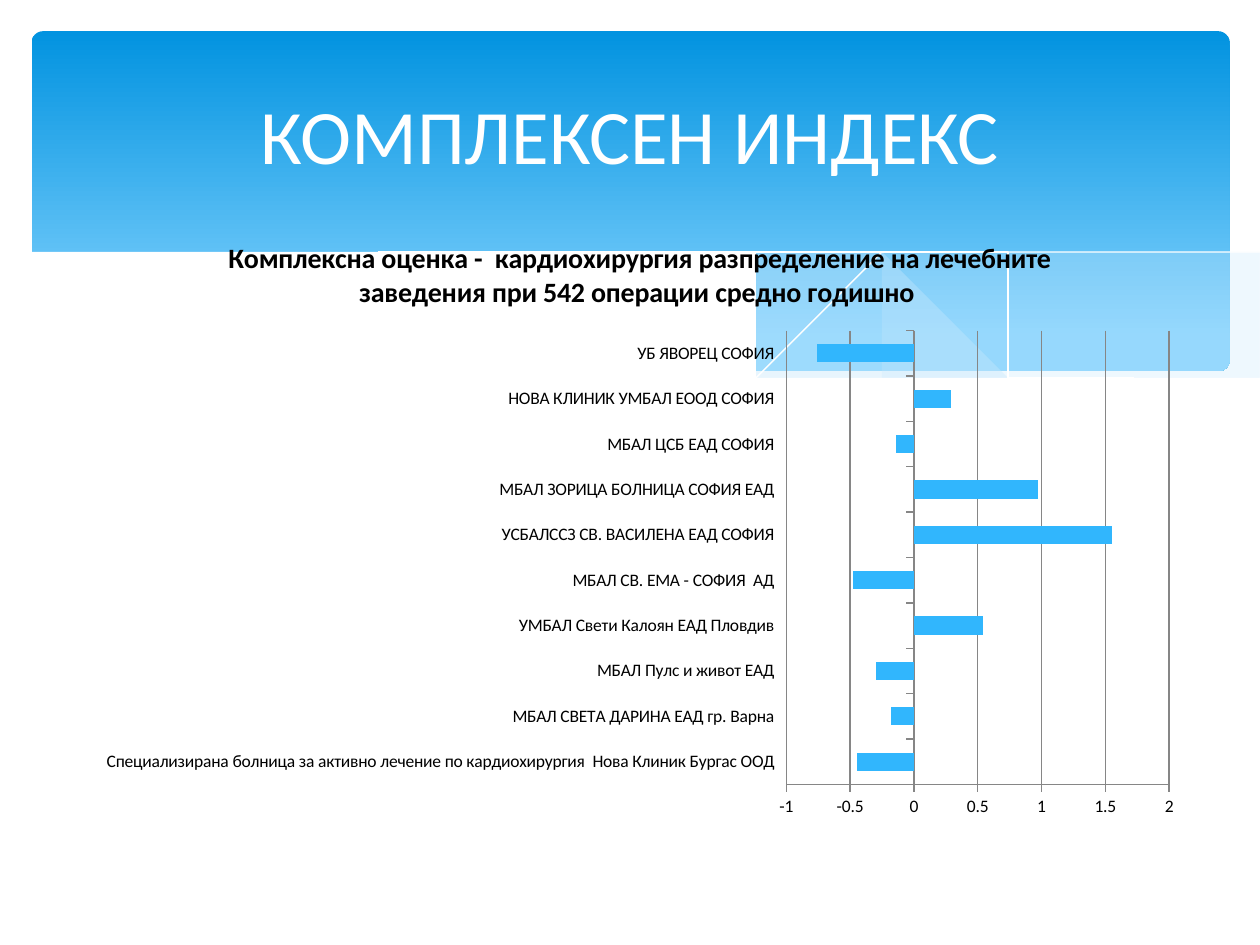
from lxml.etree import SubElement
from pptx import Presentation
from pptx.chart.data import CategoryChartData
from pptx.dml.color import RGBColor
from pptx.enum.chart import XL_CHART_TYPE, XL_TICK_LABEL_POSITION, XL_TICK_MARK
from pptx.enum.shapes import MSO_SHAPE
from pptx.enum.text import MSO_ANCHOR, PP_ALIGN
from pptx.oxml.ns import qn
from pptx.util import Inches, Pt

WIDTH, HEIGHT = Inches(10), Inches(7.5)
FONT = "Calibri"
WHITE = RGBColor(0xFF, 0xFF, 0xFF)
BLACK = RGBColor(0, 0, 0)
GRAY = RGBColor(0x86, 0x86, 0x86)
SKY_TOP = RGBColor(0x02, 0x93, 0xE0)
SKY_BOTTOM = RGBColor(0x83, 0xD3, 0xFE)
PALE_BLUE = RGBColor(0xC6, 0xE7, 0xFC)
BAR_BLUE = RGBColor(0x31, 0xB6, 0xFD)

SMALL_WAVE = [
    [(9.76, 2), (9.35, 2.07), (8.61, 2.23), (7.79, 2.42), (6.61, 2.65)],
    [(6.61, 2.65), (7.19, 2.72), (7.81, 2.77), (8.35, 2.77), (8.89, 2.72), (9.35, 2.62), (9.76, 2.47)],
]
LONG_WAVE = [
    [(8.93, 2.73), (8.37, 2.65), (7.75, 2.54), (7.06, 2.4), (6.29, 2.22), (5.55, 2.05),
     (4.89, 1.94), (4.2, 1.87), (3.61, 1.85), (2.86, 1.91)],
    [(2.86, 1.91), (3.62, 2.03), (4.49, 2.22), (5.3, 2.4), (6.01, 2.55), (6.65, 2.66),
     (7.22, 2.74), (7.73, 2.77), (8.18, 2.78), (8.57, 2.77), (8.93, 2.73)],
]
FALLING_LINE = [[(3.09, 1.95), (3.44, 1.9), (4.01, 1.87), (4.69, 1.89), (5.56, 1.97),
                 (6.36, 2.08), (7.27, 2.26), (8.31, 2.51), (9.07, 2.72)]]
RISING_LINE = [[(6.13, 2.57), (6.72, 2.41), (7.48, 2.23), (8.36, 2.04), (9.1, 1.92), (9.75, 1.85)]]
WHITE_WAVE = [
    [(9.77, 2.46), (9.3, 2.62), (8.75, 2.73), (8.09, 2.77), (7.44, 2.74), (6.68, 2.65),
     (5.79, 2.5), (5.03, 2.33), (4.18, 2.13), (3.4, 1.97), (2.71, 1.88), (2.11, 1.84),
     (1.61, 1.84), (1.06, 1.89), (0.59, 1.99), (0.23, 2.13)],
    [(0.23, 3.29), (9.77, 3.29)],
]
TITLE = "КОМПЛЕКСЕН ИНДЕКС"
CHART_TITLE = ("Комплексна оценка -  кардиохирургия разпределение на лечебните "
               "заведения при 542 операции средно годишно ")
SCORES = {
    "Специализирана болница за активно лечение по кардиохирургия  Нова Клиник Бургас ООД": -0.45,
    "МБАЛ СВЕТА ДАРИНА ЕАД гр. Варна": -0.18,
    "МБАЛ Пулс и живот ЕАД": -0.3,
    "УМБАЛ Свети Калоян ЕАД Пловдив": 0.54,
    "МБАЛ СВ. ЕМА - СОФИЯ  АД": -0.48,
    "УСБАЛССЗ СВ. ВАСИЛЕНА ЕАД СОФИЯ": 1.55,
    "МБАЛ ЗОРИЦА БОЛНИЦА СОФИЯ ЕАД": 0.97,
    "МБАЛ ЦСБ ЕАД СОФИЯ": -0.14,
    "НОВА КЛИНИК УМБАЛ ЕООД СОФИЯ": 0.29,
    "УБ ЯВОРЕЦ СОФИЯ": -0.76,
}


def apply_format(target, values):
    """Set every attribute named in a dict of format values."""
    for name, value in values.items():
        setattr(target, name, value)


def style_font(font, size, color, bold=False):
    """Give a font the slide's typeface with a size and colour."""
    apply_format(font, {"name": FONT, "size": Pt(size), "bold": bold})
    font.color.rgb = color


def box(left, top, width, height):
    """Turn shares of the slide's size into a position and size."""
    return int(WIDTH * left), int(HEIGHT * top), int(WIDTH * width), int(HEIGHT * height)


def smooth(knots, steps=4):
    """Return points of a Catmull-Rom curve through the knots."""
    if len(knots) < 3:
        return knots
    padded = [knots[0], *knots, knots[-1]]
    points = []
    for a, b, c, d in zip(padded, padded[1:], padded[2:], padded[3:]):
        for t in (step / steps for step in range(steps)):
            points.append(tuple(
                q + t * (r - p) / 2 + t**2 * (2 * p - 5 * q + 4 * r - s) / 2
                + t**3 * (3 * q - p - 3 * r + s) / 2
                for p, q, r, s in zip(a, b, c, d)))
    return points + [knots[-1]]


def add_curve(slide, edges, fill=None, opacity=100):
    """Draw smooth edges as a filled wave, or as a white hairline without a fill."""
    points = [point for edge in edges for point in smooth(edge)]
    builder = slide.shapes.build_freeform(*points[0], scale=Inches(1))
    builder.add_line_segments(points[1:], close=fill is not None)
    shape = builder.convert_to_shape()
    shape.shadow.inherit = False
    if fill is None:
        shape.fill.background()
        shape.line.color.rgb = WHITE
        shape.line.width = Pt(0)
        return
    shape.line.fill.background()
    shape.fill.solid()
    shape.fill.fore_color.rgb = fill
    if opacity < 100:
        color = shape.fill._xPr.find(".//" + qn("a:srgbClr"))
        SubElement(color, qn("a:alpha"), val=str(opacity * 1000))


def add_banner(slide):
    """Add the rounded gradient panel behind the title."""
    banner = slide.shapes.add_shape(MSO_SHAPE.ROUNDED_RECTANGLE, *box(0.025, 0.033, 0.951, 0.36))
    banner.adjustments[0] = 0.034
    banner.shadow.inherit = False
    banner.line.fill.background()
    banner.fill.gradient()
    banner.fill.gradient_angle = 270
    for stop, position, color in zip(banner.fill.gradient_stops, (0, 0.9), (SKY_TOP, SKY_BOTTOM)):
        stop.position = position
        stop.color.rgb = color


def add_title(slide):
    """Add the centred slide title."""
    frame = slide.shapes.add_textbox(*box(0.05, 0.05, 0.9, 0.183)).text_frame
    apply_format(frame, {"word_wrap": True, "vertical_anchor": MSO_ANCHOR.MIDDLE})
    paragraph = frame.paragraphs[0]
    apply_format(paragraph, {"text": TITLE, "alignment": PP_ALIGN.CENTER})
    style_font(paragraph.font, 44, WHITE)


def add_score_chart(slide):
    """Add the bar chart of hospital scores."""
    data = CategoryChartData()
    data.categories = list(SCORES)
    data.add_series("Series 1", list(SCORES.values()))
    chart = slide.shapes.add_chart(
        XL_CHART_TYPE.BAR_CLUSTERED, *box(0.067, 0.227, 0.882, 0.65), data).chart
    style_font(chart.font, 10, BLACK)
    chart.has_legend = False
    chart.chart_title.text_frame.text = CHART_TITLE
    chart.chart_title.include_in_layout = False
    style_font(chart.chart_title.text_frame.paragraphs[0].runs[0].font, 16, BLACK, bold=True)
    plot = chart.plots[0]
    apply_format(plot, {"gap_width": 150, "vary_by_categories": False})
    series = plot.series[0]
    series.invert_if_negative = False
    series.format.fill.solid()
    series.format.fill.fore_color.rgb = BAR_BLUE
    for axis in (chart.category_axis, chart.value_axis):
        apply_format(axis, {
            "tick_label_position": XL_TICK_LABEL_POSITION.LOW,
            "major_tick_mark": XL_TICK_MARK.OUTSIDE,
            "minor_tick_mark": XL_TICK_MARK.NONE,
        })
        axis.format.line.color.rgb = GRAY
    apply_format(chart.value_axis, {
        "minimum_scale": -1, "maximum_scale": 2, "major_unit": 0.5, "has_major_gridlines": True})
    chart.value_axis.major_gridlines.format.line.color.rgb = GRAY


def main():
    """Build the slide and save it."""
    presentation = Presentation()
    apply_format(presentation, {"slide_width": WIDTH, "slide_height": HEIGHT})
    slide = presentation.slides.add_slide(presentation.slide_layouts[6])
    add_banner(slide)
    add_curve(slide, SMALL_WAVE, PALE_BLUE, 29)
    add_curve(slide, LONG_WAVE, PALE_BLUE, 40)
    add_curve(slide, FALLING_LINE)
    add_curve(slide, RISING_LINE)
    add_curve(slide, WHITE_WAVE, WHITE)
    add_title(slide)
    add_score_chart(slide)
    presentation.save("out.pptx")


if __name__ == "__main__":
    main()
